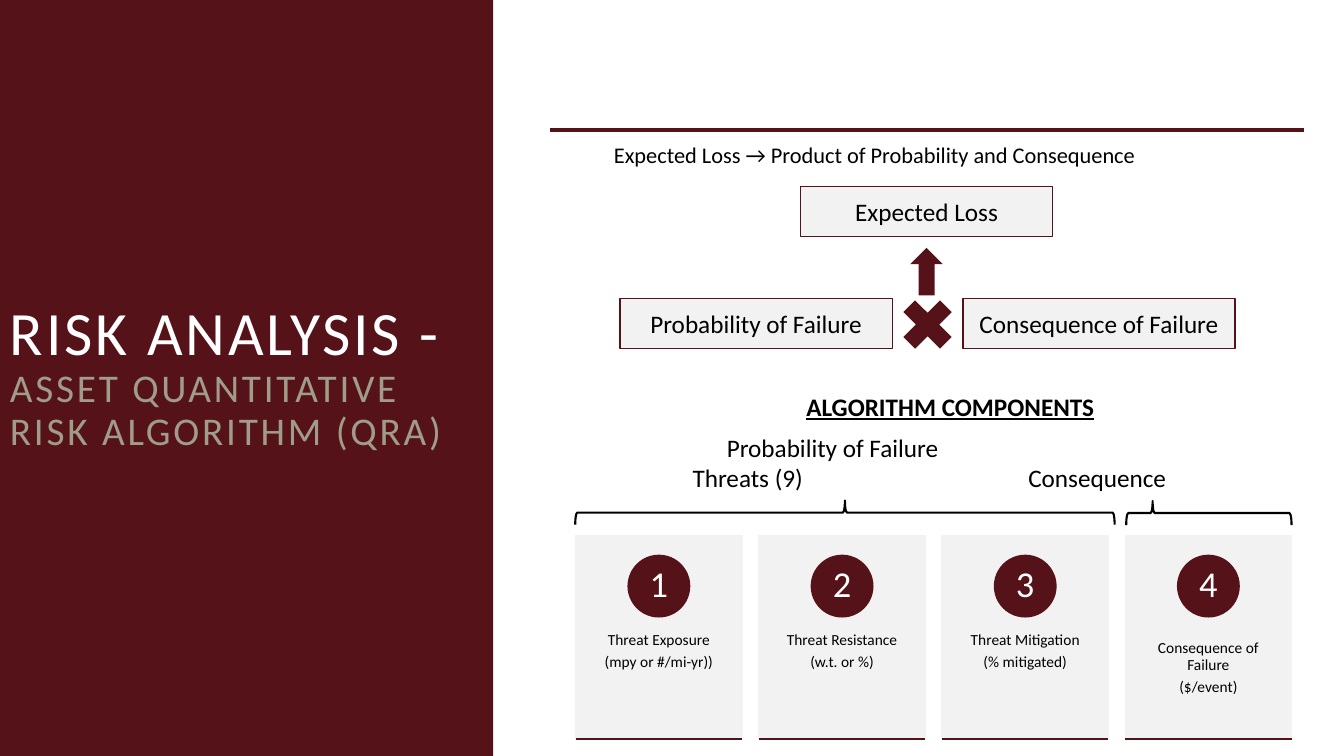
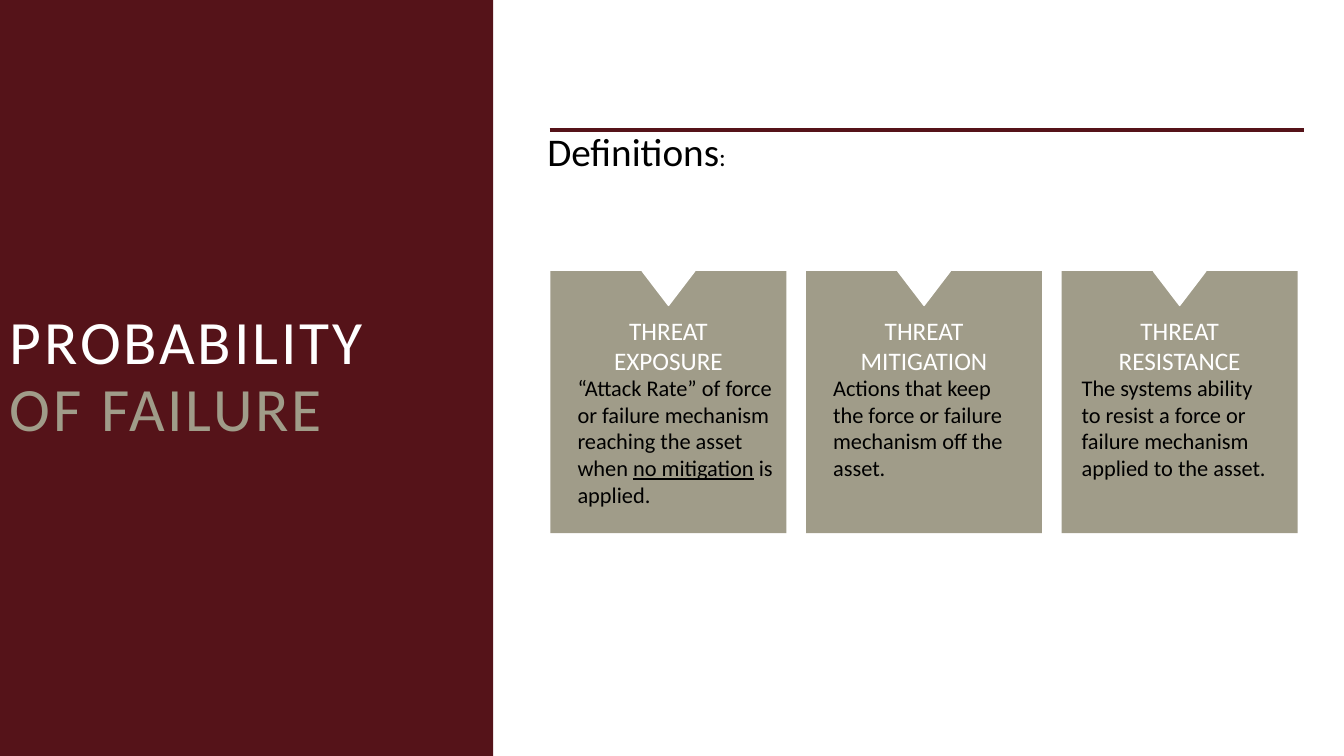
from dataclasses import dataclass
from typing import Optional

import lxml.etree
import pptx
import pptx.dml.color
import pptx.enum.shapes
import pptx.enum.text
import pptx.oxml.ns
import pptx.util
from pptx.util import Inches

FONT = "Calibri"
MAROON = "551319"
TAUPE = "A09C89"
PALE = "F2F2F2"
WHITE = "FFFFFF"
BLACK = "000000"

SHAPE = pptx.enum.shapes.MSO_SHAPE
ALIGN = pptx.enum.text.PP_ALIGN
ANCHOR = pptx.enum.text.MSO_ANCHOR
INSETS = (0.1, 0.05, 0.1, 0.05)


@dataclass
class Span:
    text: str
    size: float
    color: str = BLACK
    bold: bool = False
    underline: bool = False
    tracking: float = 0


@dataclass
class Para:
    spans: list[Span]
    align: ALIGN = ALIGN.LEFT
    line_spacing: float = 1
    before: float = 0
    after: float = 0
    indent: float = 0
    tab: Optional[float] = None


@dataclass
class Component:
    name: str
    unit: str


@dataclass
class Definition:
    term: str
    spans: list[Span]
    text_offset: float
    text_width: float


def rgb(color: str) -> pptx.dml.color.RGBColor:
    return pptx.dml.color.RGBColor.from_string(color)


def centred(text: str, size: float, color: str = BLACK, **options) -> Para:
    return Para([Span(text, size, color)], ALIGN.CENTER, **options)


def write(box, paras: list[Para], anchor: ANCHOR = ANCHOR.TOP,
          insets: tuple = INSETS, wrap: bool = True) -> None:
    frame = box.text_frame
    frame.word_wrap = wrap
    frame.vertical_anchor = anchor
    (frame.margin_left, frame.margin_top,
     frame.margin_right, frame.margin_bottom) = map(Inches, insets)
    for index, item in enumerate(paras):
        para = frame.add_paragraph() if index else frame.paragraphs[0]
        para.alignment = item.align
        para.line_spacing = item.line_spacing
        para.space_before = pptx.util.Pt(item.before)
        para.space_after = pptx.util.Pt(item.after)
        properties = para._p.get_or_add_pPr()
        properties.set("marL", str(Inches(item.indent)))
        if item.tab is not None:
            tabs = lxml.etree.SubElement(properties, pptx.oxml.ns.qn("a:tabLst"))
            lxml.etree.SubElement(tabs, pptx.oxml.ns.qn("a:tab"),
                                  pos=str(Inches(item.tab)), algn="l")
        for part in item.spans:
            span = para.add_run()
            span.text = part.text
            span.font.name = FONT
            span.font.size = pptx.util.Pt(part.size)
            span.font.bold = part.bold
            span.font.underline = part.underline
            span.font.color.rgb = rgb(part.color)
            if part.tracking:
                span._r.get_or_add_rPr().set("spc", str(round(part.tracking * 100)))


def add_text(page, left: float, top: float, width: float, height: float,
             paras: list[Para], **options) -> None:
    box = page.shapes.add_textbox(Inches(left), Inches(top), Inches(width), Inches(height))
    write(box, paras, **options)


def add_shape(page, kind: SHAPE, left: float, top: float, width: float, height: float,
              fill: Optional[str] = None, line: Optional[str] = None,
              weight: float = 1, rotation: float = 0):
    shape = page.shapes.add_shape(kind, Inches(left), Inches(top),
                                  Inches(width), Inches(height))
    shape.shadow.inherit = False
    shape.rotation = rotation
    if fill:
        shape.fill.solid()
        shape.fill.fore_color.rgb = rgb(fill)
    else:
        shape.fill.background()
    if line:
        shape.line.color.rgb = rgb(line)
        shape.line.width = pptx.util.Pt(weight)
    else:
        shape.line.fill.background()
    return shape


def add_rule(page, left: float, right: float, top: float, weight: float) -> None:
    """Draw a horizontal maroon line."""
    rule = page.shapes.add_connector(pptx.enum.shapes.MSO_CONNECTOR.STRAIGHT,
                                     Inches(left), Inches(top), Inches(right), Inches(top))
    rule.line.color.rgb = rgb(MAROON)
    rule.line.width = pptx.util.Pt(weight)
    lxml.etree.SubElement(rule._element.spPr, pptx.oxml.ns.qn("a:effectLst"))


def add_page(deck, title: str, subtitle: str, subtitle_size: float):
    """Add a blank page with the title panel and the top rule."""
    page = deck.slides.add_slide(deck.slide_layouts[6])
    panel = add_shape(page, SHAPE.RECTANGLE, 0, 0, 4.89, 7.5, MAROON)
    write(panel, [
        Para([Span(title, 44, WHITE, tracking=2)], line_spacing=0.9),
        Para([Span(subtitle, subtitle_size, TAUPE, tracking=2)], line_spacing=0.9),
    ], anchor=ANCHOR.MIDDLE)
    add_rule(page, 5.45, 12.93, 1.29, 2.75)
    return page


def add_factor(page, text: str, left: float, top: float, width: float) -> None:
    box = add_shape(page, SHAPE.RECTANGLE, left, top, width, 0.5, PALE, MAROON)
    write(box, [centred(text, 18)], anchor=ANCHOR.MIDDLE)


def add_component_card(page, number: int, component: Component, left: float) -> None:
    top, width, height, badge = 5.31, 1.65, 2.02, 0.61
    add_shape(page, SHAPE.RECTANGLE, left, top, width, height, PALE, PALE)
    add_text(page, left, 6.08, width, 1.21,
             [centred(text, 11, line_spacing=0.9, after=3.85)
              for text in (component.name, component.unit)],
             insets=(0.13, 0.36, 0.13, 0.36))
    circle = add_shape(page, SHAPE.OVAL, left + (width - badge) / 2, top + 0.2,
                       badge, badge, MAROON, MAROON)
    write(circle, [centred(str(number), 26, WHITE, line_spacing=0.9)],
          anchor=ANCHOR.MIDDLE, insets=(0.05, 0.01, 0.05, 0.01))
    add_rule(page, left, left + width, top + height, 1)


def add_definition_card(page, definition: Definition, left: float) -> None:
    top, width = 2.69, 2.34
    add_shape(page, SHAPE.RECTANGLE, left, top, width, 2.6, TAUPE)
    add_shape(page, SHAPE.ISOSCELES_TRIANGLE, left + (width - 0.52) / 2, top,
              0.52, 0.34, WHITE, WHITE, rotation=180)
    add_text(page, left + (width - 1.56) / 2, 3.08, 1.56, 0.71,
             [centred(definition.term, 18, WHITE)])
    add_text(page, left + definition.text_offset, 3.66, definition.text_width, 1.45,
             [Para(definition.spans)])


def build_risk_analysis(deck) -> None:
    page = add_page(deck, "RISK ANALYSIS -", "ASSET QUANTITATIVE RISK ALGORITHM (QRA)", 28)
    add_text(page, 5.28, 1.3, 6.79, 0.51,
             [centred("Expected Loss → Product of Probability and Consequence", 16,
                      line_spacing=0.9)], anchor=ANCHOR.MIDDLE)

    add_factor(page, "Expected Loss", 7.94, 1.85, 2.5)
    add_factor(page, "Probability of Failure", 6.15, 2.96, 2.7)
    add_factor(page, "Consequence of Failure", 9.55, 2.96, 2.7)
    add_shape(page, SHAPE.MATH_MULTIPLY, 8.85, 2.87, 0.7, 0.7, MAROON)
    add_shape(page, SHAPE.UP_ARROW, 9.03, 2.46, 0.32, 0.47, MAROON)

    add_text(page, 6.32, 3.83, 6.21, 1.14, [
        Para([Span("ALGORITHM COMPONENTS", 18, bold=True, underline=True)], ALIGN.CENTER),
        Para([Span("Probability of Failure", 18)], before=8, indent=0.79),
        Para([Span("Threats (9)\tConsequence", 18)], indent=0.45, tab=3.33),
    ])
    add_shape(page, SHAPE.RIGHT_BRACE, 8.26, 2.41, 0.24, 5.35,
              line=BLACK, weight=1.5, rotation=270)
    consequence_brace = add_shape(page, SHAPE.RIGHT_BRACE, 11.87, 4.27, 0.24, 1.64,
                                  line=BLACK, weight=1.5, rotation=270)
    consequence_brace.adjustments[1] = 0.16

    components = [
        Component("Threat Exposure", "(mpy or #/mi-yr))"),
        Component("Threat Resistance", "(w.t. or %)"),
        Component("Threat Mitigation", "(% mitigated)"),
        Component("Consequence of Failure", "($/event)"),
    ]
    first, last = 5.71, 11.16
    pitch = (last - first) / (len(components) - 1)
    for index, component in enumerate(components):
        add_component_card(page, index + 1, component, first + index * pitch)


def build_probability(deck) -> None:
    page = add_page(deck, "PROBABILITY", "OF FAILURE", 44)
    add_text(page, 5.33, 1.21, 2, 0.57,
             [Para([Span("Definitions", 28), Span(":", 18)])], wrap=False)

    definitions = [
        Definition("THREAT EXPOSURE", [
            Span("“Attack Rate” of force or failure mechanism reaching the asset when ", 16),
            Span("no mitigation", 16, underline=True),
            Span(" is applied.", 16),
        ], 0.17, 2.26),
        Definition("THREAT MITIGATION", [
            Span("Actions that keep the force or failure mechanism off the asset.", 16),
        ], 0.17, 2.1),
        Definition("THREAT RESISTANCE", [
            Span("The systems ability to resist a force or failure mechanism "
                 "applied to the asset.", 16),
        ], 0.1, 2.1),
    ]
    first, last = 5.46, 10.53
    pitch = (last - first) / (len(definitions) - 1)
    for index, definition in enumerate(definitions):
        add_definition_card(page, definition, first + index * pitch)


def main() -> None:
    deck = pptx.Presentation()
    deck.slide_width = Inches(13.33)
    deck.slide_height = Inches(7.5)
    build_risk_analysis(deck)
    build_probability(deck)
    deck.save("out.pptx")


if __name__ == "__main__":
    main()
